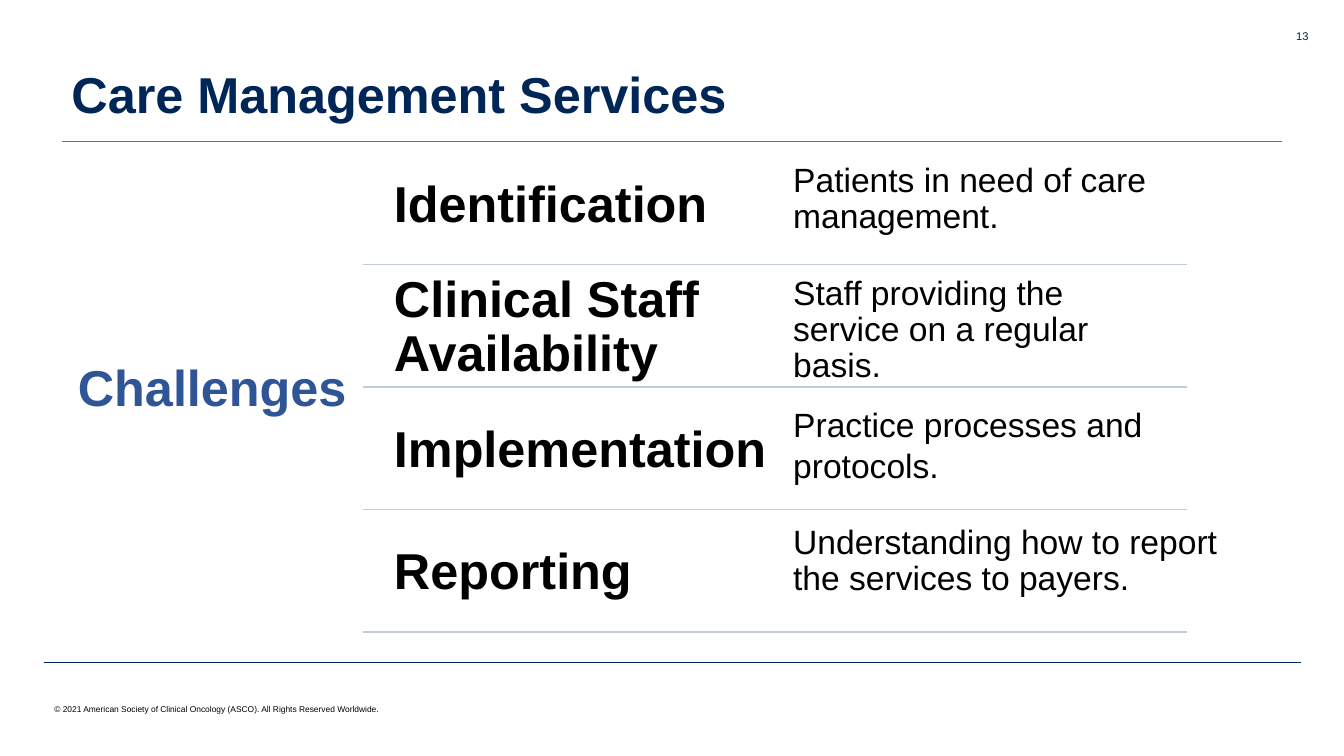
from lxml import etree
from pptx import Presentation
from pptx.dml.color import RGBColor
from pptx.enum.shapes import MSO_CONNECTOR
from pptx.enum.text import MSO_ANCHOR, PP_ALIGN
from pptx.oxml.ns import qn
from pptx.util import Cm, Pt

NAVY, BLUE, ACCENT, PALE, BLACK = "002557", "2F5597", "4472C4", "C1C9E4", "000000"
ROW_TOP, ROW_PITCH, ROW_HEIGHT = 3.71, 3.09, 2.95
DETAIL_LEFT = 19.74

# topic, topic width, detail, then the detail's top, width and text style
ROWS = [
    ("Identification", 9.98, "Patients in need of care management.",
     3.86, 11.89, dict(inset=0.25, spacing=0.9)),
    ("Clinical Staff Availability", 9.98,
     "Staff providing the service on a regular basis.",
     6.86, 9.98, dict(inset=0.25, spacing=0.9, anchor=MSO_ANCHOR.MIDDLE)),
    ("Implementation", 10.97, "Practice processes and protocols.",
     10.06, 9.47, {}),
    ("Reporting", 9.98, "Understanding how to report the services to payers.",
     12.98, 12.37, dict(inset=0.25, spacing=0.9)),
]


def rgb(value):
    return RGBColor.from_string(value)


class SlideBuilder:
    font = "Arial"

    def __init__(self, prs):
        self.s = prs.slides.add_slide(prs.slide_layouts[6])

    def text(self, text, left, top, width, height, size, color=BLACK, bold=False,
             anchor=MSO_ANCHOR.TOP, align=PP_ALIGN.LEFT, inset=None, spacing=None):
        sp = self.s.shapes.add_textbox(Cm(left), Cm(top), Cm(width), Cm(height))
        tf = sp.text_frame
        tf.word_wrap = True
        tf.vertical_anchor = anchor
        if inset is not None:
            tf.margin_left = tf.margin_right = Cm(inset)
            tf.margin_top = tf.margin_bottom = Cm(inset)
        p = tf.paragraphs[0]
        p.text = text
        p.alignment = align
        p.line_spacing = spacing
        p.font.name = self.font
        p.font.size = Pt(size)
        p.font.bold = bold
        p.font.color.rgb = rgb(color)

    def heading(self, text, left, top, width, height, **style):
        """Add a large bold label, centred vertically."""
        self.text(text, left, top, width, height, 36, bold=True,
                  anchor=MSO_ANCHOR.MIDDLE, spacing=0.9, **style)

    def rule(self, left, right, y, color, weight=1):
        """Add a horizontal line."""
        line = self.s.shapes.add_connector(
            MSO_CONNECTOR.STRAIGHT, Cm(left), Cm(y), Cm(right), Cm(y))
        line.line.color.rgb = rgb(color)
        line.line.width = Pt(weight)
        etree.SubElement(line._element.spPr, qn("a:effectLst"))


def main():
    prs = Presentation()
    prs.slide_width, prs.slide_height = Cm(33.87), Cm(19.05)
    b = SlideBuilder(prs)

    b.rule(1.12, 32.79, 16.69, NAVY, 0.25)
    b.heading("Care Management Services", 1.55, 0.61, 29.21, 3.68, color=NAVY)
    b.text("© 2021 American Society of Clinical Oncology (ASCO). "
           "All Rights Reserved Worldwide.",
           1.12, 17.37, 11.43, 1.02, 6, anchor=MSO_ANCHOR.MIDDLE)
    b.text("13", 30.84, 0.61, 2.39, 1.02, 8, NAVY, align=PP_ALIGN.RIGHT)

    b.rule(1.55, 32.31, 3.56, ACCENT)
    b.heading("Challenges", 1.55, 3.56, 7.6, 12.55, color=BLUE,
              align=PP_ALIGN.CENTER, inset=0.38)

    for i, (topic, topic_width, detail, top, width, style) in enumerate(ROWS):
        y = ROW_TOP + i * ROW_PITCH
        b.heading(topic, 9.55, y, topic_width, ROW_HEIGHT, inset=0.38)
        b.text(detail, DETAIL_LEFT, top, width, ROW_HEIGHT, 24, **style)
        b.rule(9.14, 29.92, y + ROW_HEIGHT, PALE)

    prs.save("out.pptx")


if __name__ == "__main__":
    main()
